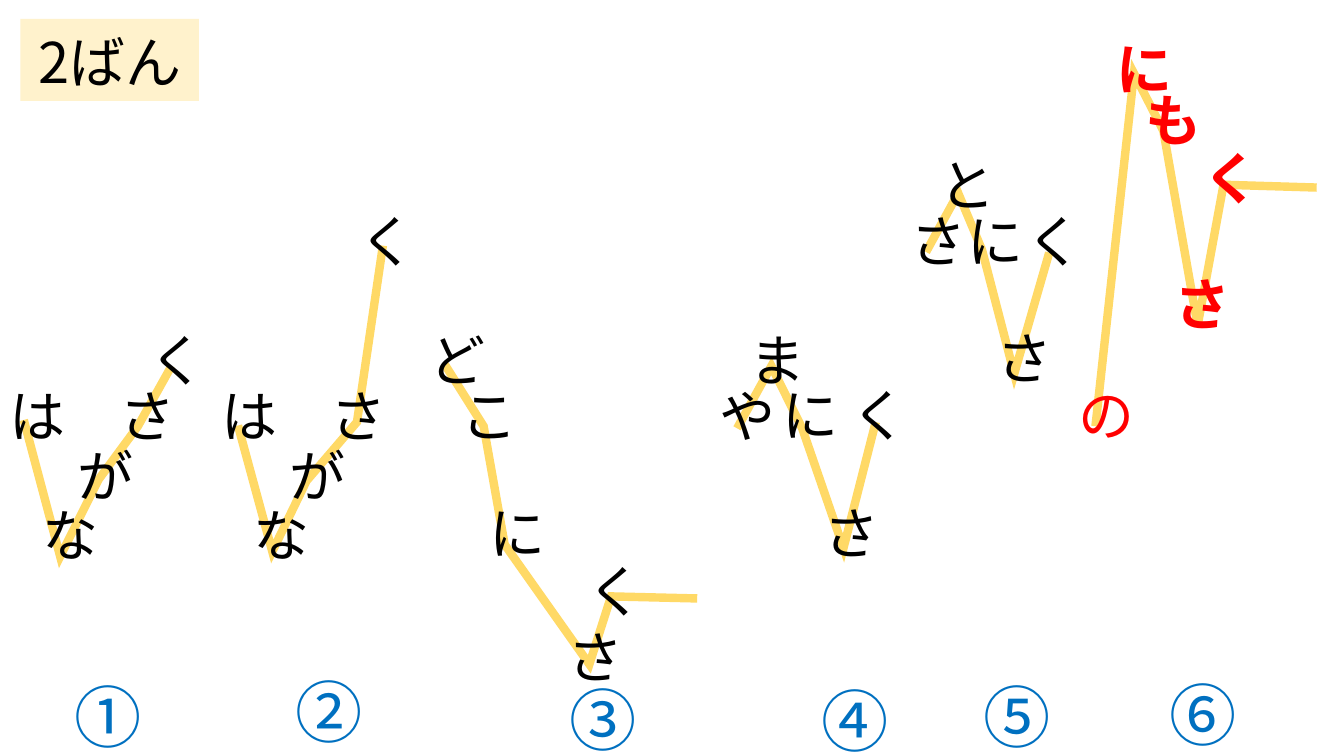
from lxml.etree import SubElement
from pptx import Presentation
from pptx.dml.color import RGBColor
from pptx.enum.text import MSO_ANCHOR, MSO_AUTO_SIZE, PP_ALIGN
from pptx.oxml.ns import qn
from pptx.util import Pt

FONT = "Noto Sans CJK JP"
BLACK = RGBColor(0x00, 0x00, 0x00)
RED = RGBColor(0xFF, 0x00, 0x00)
BLUE = RGBColor(0x00, 0x70, 0xC0)
GOLD = RGBColor(0xFF, 0xD9, 0x66)
CREAM = RGBColor(0xFF, 0xF2, 0xCC)

LETTER_SIZE = (41, 47.5)
NUMBER_SIZE = (57.5, 65.5)

# Offsets of letters, contour points and number count from each phrase's origin
PHRASES = [
    dict(origin=(0, 237), letters="はながさく", number="①", number_at=(46, 242),
         places=[(0, 40), (23, 125), (48, 83), (78, 40), (100, 0)],
         contour=[(17, 63), (43, 160.5), (70.5, 105.5), (98.5, 67.5), (122.5, 24.5)]),
    dict(origin=(151, 152), letters="はながさく", number="②", number_at=(53, 323),
         places=[(0, 125), (23, 210), (49, 168), (78, 125), (99, 0)],
         contour=[(19, 152), (43.5, 242), (68, 191.5), (104, 149.5), (122.5, 23.5)]),
    dict(origin=(299.5, 237), letters="どこにさく", number="③", number_at=(100, 244),
         places=[(0, 0), (23, 40), (43, 124), (98.5, 212.5), (113, 165)],
         contour=[(18, 23), (46, 67.5), (61, 152), (121.5, 237.5), (137, 189), (198.5, 190.5)]),
    dict(origin=(507, 237), letters="やまにさく", number="④", number_at=(72.5, 244.5),
         places=[(0, 40), (21.5, 0), (45, 39.5), (74, 124), (94, 39.5)],
         contour=[(19.5, 69), (44, 24.5), (66, 69), (95.5, 154.5), (118.5, 64.5)]),
    dict(origin=(643, 112.5), letters="さとにさく", number="⑤", number_at=(52.5, 366.5),
         places=[(0, 40), (21, 0), (41, 39.5), (62, 123.5), (83, 39.5)],
         contour=[(18.5, 67.5), (41.5, 25.5), (58.5, 66), (81.5, 154.5), (106.5, 68)]),
    dict(origin=(763, 29), letters="のにもさく", number="⑥", number_at=(65, 448.5),
         places=[(0, 247.5), (27.5, 0), (48.5, 36.5), (69, 168.5), (89.5, 78.5)],
         contour=[(19.5, 275.5), (47, 23.5), (68, 64.5), (92.5, 203.5), (111, 103), (177.5, 105)],
         color=RED, bold_from=1),
]


def write_text(shape, text, size, color, bold=False):
    shape.text_frame.word_wrap = True
    paragraph = shape.text_frame.paragraphs[0]
    paragraph.text = text
    font = paragraph.font
    font.name, font.size, font.bold = FONT, Pt(size), bold
    font.color.rgb = color
    # The East Asian typeface has no public property
    properties = paragraph._p.pPr.find(qn("a:defRPr"))
    SubElement(properties, qn("a:ea")).set("typeface", FONT)
    return paragraph


def add_heading(slide, left, top, width, height):
    title = slide.shapes.title
    title.left, title.top, title.width, title.height = map(Pt, (left, top, width, height))
    title.fill.solid()
    title.fill.fore_color.rgb = CREAM
    paragraph = write_text(title, "2ばん", 40, BLACK)
    paragraph.alignment = PP_ALIGN.CENTER
    paragraph.line_spacing = 0.9
    title.text_frame.vertical_anchor = MSO_ANCHOR.BOTTOM
    title.text_frame.auto_size = MSO_AUTO_SIZE.NONE


def add_contour(slide, points):
    points = [(Pt(x), Pt(y)) for x, y in points]
    builder = slide.shapes.build_freeform(*points[0])
    builder.add_line_segments(points[1:], close=False)
    contour = builder.convert_to_shape()
    contour.shadow.inherit = False
    contour.fill.background()
    contour.line.color.rgb = GOLD
    contour.line.width = Pt(6)
    # Sharp corners
    SubElement(contour.line._get_or_add_ln(), qn("a:miter")).set("lim", "800000")


def add_phrase(slide, origin, letters, places, contour, number, number_at,
               color=BLACK, bold_from=5):
    left, top = origin

    # Pitch contour behind the letters
    add_contour(slide, [(left + x, top + y) for x, y in contour])

    # One box per letter
    for index, (letter, (x, y)) in enumerate(zip(letters, places)):
        box = slide.shapes.add_textbox(*map(Pt, (left + x, top + y, *LETTER_SIZE)))
        paragraph = write_text(box, letter, 40, color, bold=index >= bold_from)
        paragraph.line_spacing = 0.9
        box.text_frame.vertical_anchor = MSO_ANCHOR.BOTTOM

    # Circled number
    x, y = number_at
    box = slide.shapes.add_textbox(*map(Pt, (left + x, top + y, *NUMBER_SIZE)))
    write_text(box, number, 48, BLUE)
    box.text_frame.auto_size = MSO_AUTO_SIZE.SHAPE_TO_FIT_TEXT


def main():
    presentation = Presentation()
    presentation.slide_width, presentation.slide_height = Pt(960), Pt(540)
    slide = presentation.slides.add_slide(presentation.slide_layouts[5])
    add_heading(slide, 14.5, 13.5, 127.5, 58.5)
    for phrase in PHRASES:
        add_phrase(slide, **phrase)
    presentation.save("out.pptx")


if __name__ == "__main__":
    main()
